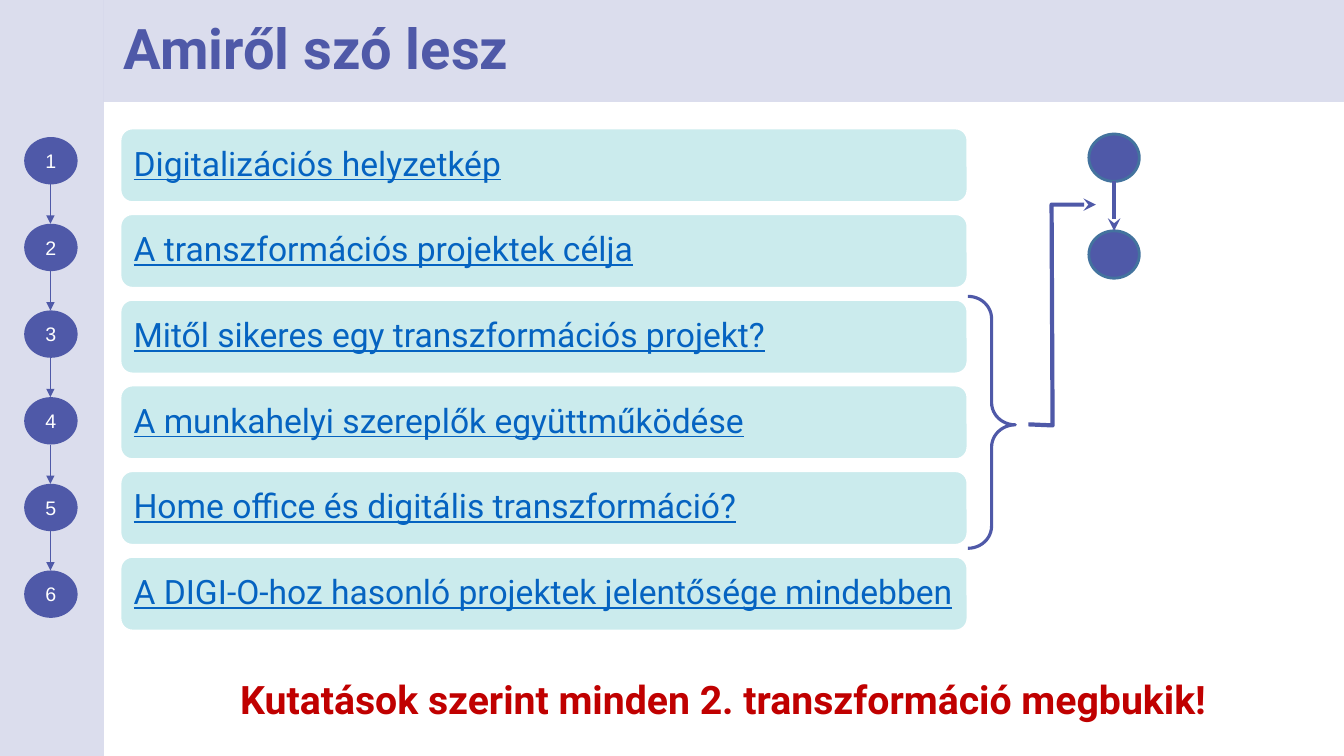
from dataclasses import dataclass
from itertools import pairwise

from lxml.etree import SubElement
from pptx import Presentation
from pptx.dml.color import RGBColor
from pptx.enum.shapes import MSO_CONNECTOR, MSO_SHAPE as SHAPE
from pptx.enum.text import MSO_ANCHOR as ANCHOR, PP_ALIGN as ALIGN
from pptx.oxml.ns import qn
from pptx.util import Inches, Pt


@dataclass(frozen=True)
class Theme:
    """Colours, fonts and type sizes of the slide."""
    indigo: str = "4F59A8"
    aqua: str = "CBEBED"
    white: str = "FFFFFF"
    outline: str = "43739E"
    link: str = "0563C1"
    red: str = "C00000"
    body_font: str = "Roboto"
    number_font: str = "Arial"
    title_size: int = 40
    claim_size: int = 28
    topic_size: int = 24
    number_size: int = 14


THEME = Theme()
TOPICS = (
    "Digitalizációs helyzetkép",
    "A transzformációs projektek célja",
    "Mitől sikeres egy transzformációs projekt?",
    "A munkahelyi szereplők együttműködése",
    "Home office és digitális transzformáció?",
    "A DIGI-O-hoz hasonló projektek jelentősége mindebben",
)
STEP_TOP, STEP_PITCH, STEP_HEIGHT = 1.36, 0.86, 0.47
TOPIC_TOP, TOPIC_PITCH = 1.27, 0.85


def rgb(code):
    """Turn a hex code into a colour."""
    return RGBColor.from_string(code)


def set_line(s, color, width):
    """Give a shape or connector a solid line."""
    s.line.color.rgb = rgb(color)
    s.line.width = Pt(width)


def add_arrowhead(s, kind):
    """Put an arrowhead at the end of a line."""
    SubElement(s._element.spPr.find(qn("a:ln")), qn("a:tailEnd"), type=kind)


def add_shape(slide, kind, box, fill=None, line=None, alpha=None):
    """Draw a preset shape with optional fill, line and opacity percentage."""
    s = slide.shapes.add_shape(kind, *map(Inches, box))
    s.shadow.inherit = False
    if fill:
        s.fill.solid()
        s.fill.fore_color.rgb = rgb(fill)
    else:
        s.fill.background()
    if alpha:
        color = s._element.spPr.find(qn("a:solidFill"))[0]
        SubElement(color, qn("a:alpha"), val=str(alpha * 1000))
    if line:
        set_line(s, *line)
    else:
        s.line.fill.background()
    return s


def set_text(s, text, color, size, align=ALIGN.LEFT, inset=0.1, spacing=0.9,
             **font):
    """Write one vertically centred paragraph into a shape."""
    tf = s.text_frame
    frame = {"word_wrap": True, "vertical_anchor": ANCHOR.MIDDLE,
             "margin_left": Inches(inset), "margin_right": Inches(inset)}
    for name, value in frame.items():
        setattr(tf, name, value)
    p = tf.paragraphs[0]
    p.alignment, p.line_spacing = align, spacing
    r = p.add_run()
    r.text = text
    r.font.color.rgb = rgb(color)
    for name, value in {"name": THEME.body_font, "size": Pt(size), **font}.items():
        setattr(r.font, name, value)


def add_arrow(slide, x, top, bottom, width, head):
    """Draw a vertical arrow pointing down."""
    s = slide.shapes.add_connector(
        MSO_CONNECTOR.STRAIGHT, *map(Inches, (x, top, x, bottom)))
    set_line(s, THEME.indigo, width)
    add_arrowhead(s, head)
    SubElement(s._element.spPr, qn("a:effectLst"))


def add_bent_arrow(slide, points):
    """Draw an open polyline with an arrowhead at its last point."""
    start, *rest = [tuple(map(Inches, point)) for point in points]
    builder = slide.shapes.build_freeform(*start)
    builder.add_line_segments(rest, close=False)
    s = builder.convert_to_shape()
    s.shadow.inherit = False
    s.fill.background()
    set_line(s, THEME.indigo, 3)
    add_arrowhead(s, "stealth")


def add_steps(slide):
    """Draw the numbered circles and the arrows between them."""
    tops = [STEP_TOP + STEP_PITCH * i for i in range(len(TOPICS))]
    for number, top in enumerate(tops, 1):
        s = add_shape(slide, SHAPE.OVAL, (0.24, top, 0.53, STEP_HEIGHT),
                      THEME.indigo)
        set_text(s, str(number), THEME.white, THEME.number_size, ALIGN.CENTER,
                 inset=0, spacing=1, name=THEME.number_font)
    for top, following in pairwise(tops):
        add_arrow(slide, 0.5, top + STEP_HEIGHT, following, 1, "triangle")


def add_topics(slide):
    """Draw the topic bars."""
    for i, topic in enumerate(TOPICS):
        box = 1.19, TOPIC_TOP + TOPIC_PITCH * i, 8.41, 0.74
        s = add_shape(slide, SHAPE.ROUNDED_RECTANGLE, box, THEME.aqua,
                      (THEME.white, 2))
        set_text(s, topic, THEME.link, THEME.topic_size, underline=True)


def add_side_diagram(slide):
    """Draw the two linked circles and the brace that points at their link."""
    for top in (1.33, 2.29):
        add_shape(slide, SHAPE.OVAL, (10.8, top, 0.5, 0.47), THEME.indigo,
                  (THEME.outline, 2))
    add_arrow(slide, 11.05, 1.8, 2.29, 3, "stealth")
    brace = add_shape(slide, SHAPE.RIGHT_BRACE, (9.6, 2.94, 0.47, 2.5),
                      line=(THEME.indigo, 2.25))
    brace.adjustments[0], brace.adjustments[1] = 0.47, 0.51
    add_bent_arrow(slide, [(10.2, 4.21), (10.44, 4.22), (10.43, 2.03),
                           (10.87, 2.03)])


def main():
    """Build and save the slide."""
    prs = Presentation()
    prs.slide_width, prs.slide_height = Inches(13.33), Inches(7.5)
    slide = prs.slides.add_slide(prs.slide_layouts[6])
    add_shape(slide, SHAPE.RECTANGLE, (0, 0, 1.03, 7.5), THEME.indigo, alpha=20)
    add_steps(slide)
    add_topics(slide)
    title = add_shape(slide, SHAPE.RECTANGLE, (1.03, 0, 12.3, 1.01),
                      THEME.indigo, alpha=20)
    set_text(title, "Amiről szó lesz", THEME.indigo, THEME.title_size,
             inset=0.2, bold=True)
    add_side_diagram(slide)
    claim = slide.shapes.add_textbox(*map(Inches, (1.49, 6.21, 11.36, 1.51)))
    set_text(claim, "Kutatások szerint minden 2. transzformáció megbukik!",
             THEME.red, THEME.claim_size, ALIGN.CENTER, bold=True)
    prs.save("out.pptx")


if __name__ == "__main__":
    main()
